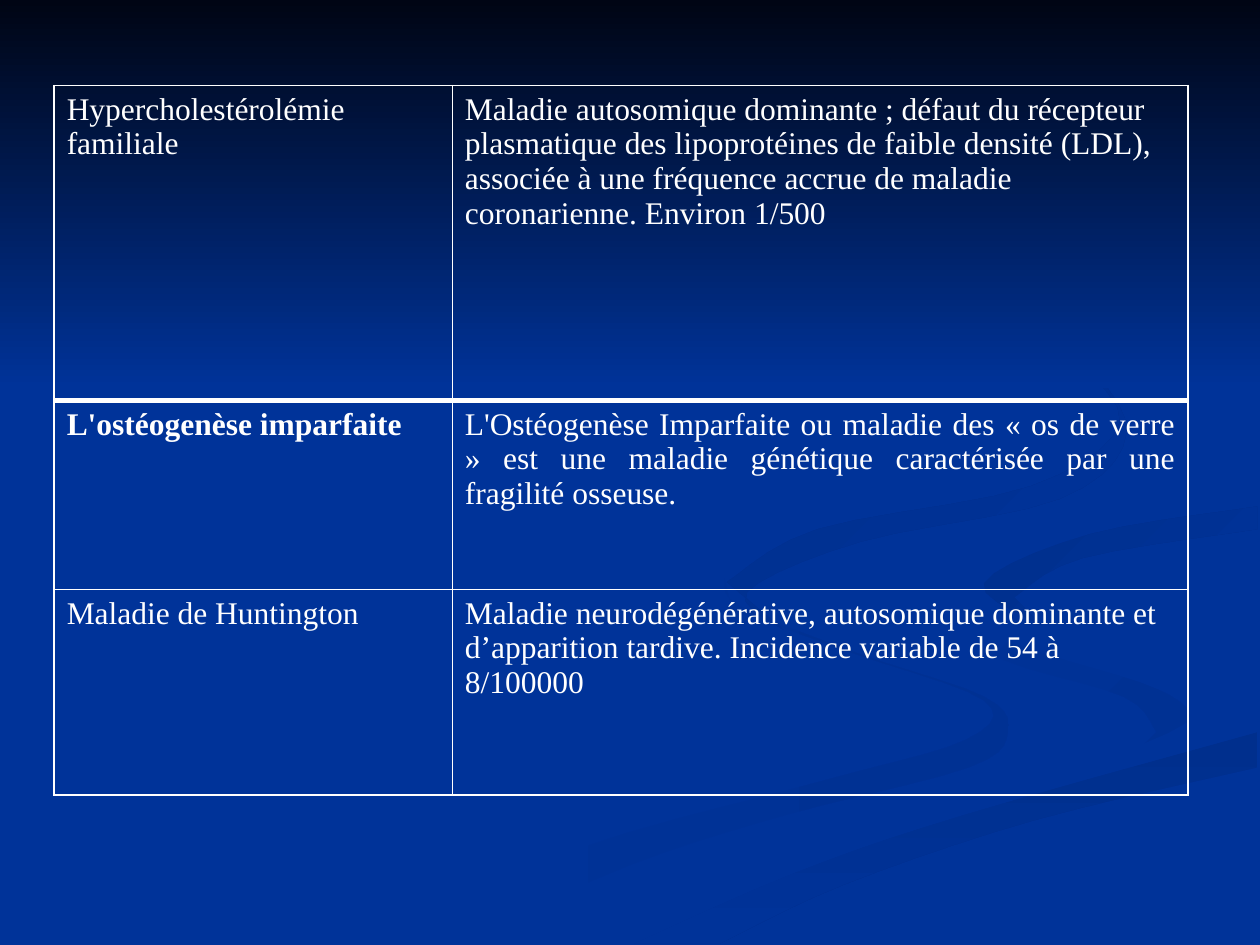
from lxml.etree import SubElement
from pptx import Presentation
from pptx.dml.color import RGBColor
from pptx.enum.shapes import MSO_SHAPE as Shape
from pptx.enum.text import PP_ALIGN as Align
from pptx.oxml.ns import qn
from pptx.util import Inches, Pt

BLUE = RGBColor(0x00, 0x33, 0x99)
DEEP_BLUE = RGBColor(0x00, 0x2F, 0x8D)
SOFT_BLUE = RGBColor(0x00, 0x31, 0x93)
NIGHT = RGBColor(0x00, 0x05, 0x14)
WHITE = RGBColor(0xFF, 0xFF, 0xFF)
FONT = "Times New Roman"

# Edges that neighbouring ribbons share, in inches
BEND = [(7.25, 4.64), (7.45, 4.9), (8.3, 5.19), (9.19, 5.47), (9.43, 5.73)]
SWEEP = [(5.03, 7.49), (6.3, 6.93), (7.64, 6.47), (9.98, 5.81)]
HOOK = [(9.98, 4.02), (8.65, 4.24), (7.81, 4.63)]

# Ribbons from back to front: first colour, last colour, angle, smooth edges
RIBBONS = [
    (BLUE, SOFT_BLUE, 0, [
        [(5.75, 4.59), (5.87, 4.81), (6.82, 5.19), (7.81, 5.53), (8, 5.81),
         (7.69, 6.09), (6.23, 6.47), (4.99, 6.87), (3.61, 7.49)],
        [(3, 7.49), (4.58, 6.74), (6.52, 6.2), (7.67, 5.87), (7.81, 5.56),
         (6.79, 5.19), (5.81, 4.84)]]),
    (BLUE, SOFT_BLUE, 45, [
        BEND + [(8.94, 6.05)],
        [(9.18, 5.81), (8.92, 5.53), (7.97, 5.24), (7.3, 4.84)]]),
    (DEEP_BLUE, BLUE, 90, [
        SWEEP, [(9.98, 6.09), (8.21, 6.51), (6.7, 7.02), (5.71, 7.49)]]),
    (BLUE, None, 0, [
        [(9.98, 3.87), (8.3, 4.15)] + BEND + [(8.12, 6.25), (6.63, 6.68), (4.77, 7.49)],
        SWEEP, [(9.98, 5.38), (8.66, 5.09)] + HOOK[::-1]]),
    (DEEP_BLUE, BLUE, 45, [
        HOOK + [(8.26, 4.96)], [(8.05, 4.74), (8.59, 4.43), (9.98, 4.2)]]),
    (DEEP_BLUE, BLUE, 45, [
        [(7.62, 2.33), (8.54, 2.83), (8.94, 3.44), (8.41, 3.96), (6.83, 4.3),
         (5.93, 4.7), (6.22, 5)],
        [(5.77, 4.62), (6.49, 4.2), (8.18, 3.86), (8.89, 3.35), (8.46, 2.79)]]),
]

# Disease, its format, description, its format
ROWS = [
    ("Hypercholestérolémie familiale", {},
     "Maladie autosomique dominante ; défaut du récepteur plasmatique des "
     "lipoprotéines de faible densité (LDL), associée à une fréquence accrue "
     "de maladie coronarienne. Environ 1/500", {}),
    ("L'ostéogenèse imparfaite", {"bold": True},
     "L'Ostéogenèse Imparfaite ou maladie des « os de verre » est une maladie "
     "génétique caractérisée par une fragilité osseuse.",
     {"align": Align.JUSTIFY}),
    ("Maladie de Huntington", {},
     "Maladie neurodégénérative, autosomique dominante et d’apparition "
     "tardive. Incidence variable de 54 à 8/100000", {}),
]


def smooth_edge(points, steps=5):
    """Return points along a Catmull-Rom curve through the given ones."""
    padded = [points[0], *points, points[-1]]
    curve = []
    for quad in zip(padded, padded[1:], padded[2:], padded[3:]):
        for t in (step / steps for step in range(steps)):
            curve.append(tuple(
                b + t * ((c - a) + t * ((2 * a - 5 * b + 4 * c - d)
                                        + t * (3 * b - a - 3 * c + d))) / 2
                for a, b, c, d in zip(*quad)))
    return curve + [points[-1]]


def paint(sp, first, last=None, angle=0):
    """Fill with one colour or a linear gradient, without line or shadow."""
    sp.shadow.inherit = False
    sp.line.fill.background()
    if last is None:
        sp.fill.solid()
        sp.fill.fore_color.rgb = first
        return
    sp.fill.gradient()
    sp.fill.gradient_angle = -angle % 360
    for stop, color, position in zip(sp.fill.gradient_stops, (first, last), (0, 1)):
        stop.color.rgb = color
        stop.position = position


def write(tf, text, size=18, bold=False, align=Align.LEFT, color=WHITE):
    p = tf.paragraphs[0]
    p.alignment = align
    r = p.add_run()
    r.text = text
    r.font.name, r.font.size, r.font.bold = FONT, Pt(size), bold
    r.font.color.rgb = color


def set_borders(cell, **widths):
    tc_pr = cell._tc.get_or_add_tcPr()
    for side in "LRTB":
        ln = SubElement(tc_pr, qn(f"a:ln{side}"), w=str(Pt(widths.get(side, 1))))
        fill = SubElement(ln, qn("a:solidFill"))
        SubElement(fill, qn("a:srgbClr"), val=str(WHITE))


def add_background(slide, width, fade_height):
    slide.background.fill.solid()
    slide.background.fill.fore_color.rgb = BLUE
    # Ribbons
    for first, last, angle, edges in RIBBONS:
        start, *rest = [(Inches(x), Inches(y))
                        for edge in edges for x, y in smooth_edge(edge)]
        builder = slide.shapes.build_freeform(*start)
        builder.add_line_segments(rest, close=True)
        paint(builder.convert_to_shape(), first, last, angle)
    # Dark fade at the top
    fade = slide.shapes.add_shape(Shape.RECTANGLE, 0, 0, width, fade_height)
    paint(fade, NIGHT, BLUE, 90)


def add_disease_table(slide, left, top, width, height):
    table = slide.shapes.add_table(len(ROWS), 2, left, top, width, height).table
    table.first_row = table.horz_banding = False
    table.columns[0].width = Inches(3.16)
    table.columns[1].width = width - Inches(3.16)
    for row, row_height in zip(table.rows, (2.5, 1.5, 1.63)):
        row.height = Inches(row_height)
    # Thick rule under the first row
    rules = [{"B": 3}, {"T": 3}, {}]
    for row, rule, (name, name_format, about, about_format) in zip(table.rows, rules, ROWS):
        contents = ((name, name_format), (about, about_format))
        for cell, (text, text_format) in zip(row.cells, contents):
            set_borders(cell, **rule)
            cell.fill.background()
            write(cell.text_frame, text, **text_format)


def main():
    prs = Presentation()
    prs.slide_width, prs.slide_height = Inches(10), Inches(7.5)
    slide = prs.slides.add_slide(prs.slide_layouts[6])
    add_background(slide, prs.slide_width, Inches(3.08))
    add_disease_table(slide, Inches(0.43), Inches(0.68), Inches(9), Inches(5.63))
    prs.save("out.pptx")


if __name__ == "__main__":
    main()
